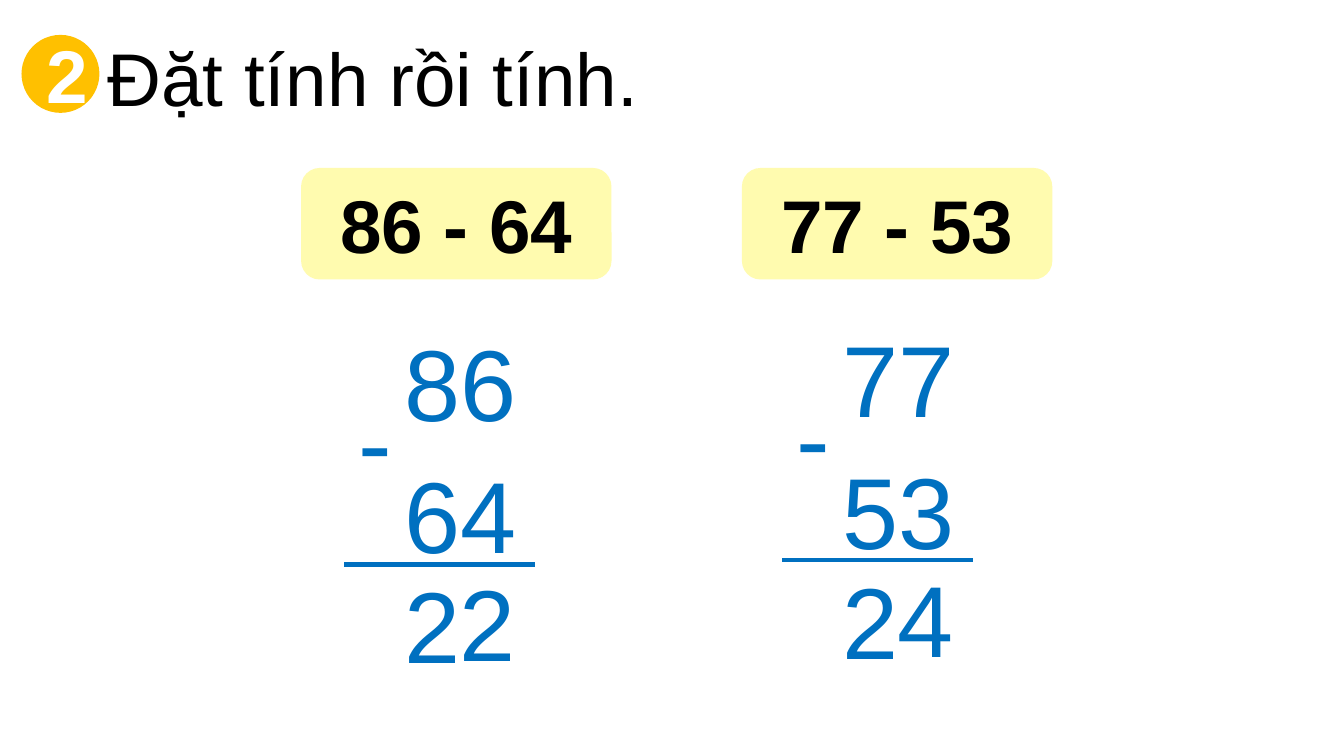
from dataclasses import dataclass

from lxml.etree import SubElement
from pptx import Presentation
from pptx.dml.color import RGBColor
from pptx.enum.shapes import MSO_CONNECTOR, MSO_SHAPE
from pptx.enum.text import MSO_ANCHOR, MSO_AUTO_SIZE, PP_ALIGN
from pptx.oxml.ns import qn
from pptx.slide import Slide
from pptx.text.text import TextFrame
from pptx.util import Inches, Pt

BLACK = RGBColor(0x00, 0x00, 0x00)
WHITE = RGBColor(0xFF, 0xFF, 0xFF)
BLUE = RGBColor(0x00, 0x70, 0xC0)
AMBER = RGBColor(0xFF, 0xC0, 0x00)
CREAM = RGBColor(0xFF, 0xFB, 0xAF)


@dataclass(frozen=True)
class Subtraction:
    top_number: str
    bottom_number: str
    result: str
    card_left: float
    left: float  # left end of the rule
    rule_y: float


SUBTRACTIONS = [
    Subtraction("86", "64", "22", 2.24, 2.56, 4.2),
    Subtraction("77", "53", "24", 5.52, 5.82, 4.17),
]


def write(tf: TextFrame, text: str, size: int, color: RGBColor,
          bold: bool = False, align: PP_ALIGN = PP_ALIGN.CENTER) -> None:
    tf.word_wrap = True
    p = tf.paragraphs[0]
    p.text = text
    p.alignment = align
    p.font.name = "Arial"
    p.font.size = Pt(size)
    p.font.bold = bold
    p.font.color.rgb = color


def add_label(s: Slide, text: str, left: float, top: float, width: float) -> None:
    box = s.shapes.add_textbox(Inches(left), Inches(top), Inches(width), Inches(1.01))
    write(box.text_frame, text, 54, BLUE)


def add_filled(s: Slide, kind: MSO_SHAPE, left: float, top: float, width: float,
               height: float, fill: RGBColor, text: str, color: RGBColor) -> None:
    sp = s.shapes.add_shape(kind, Inches(left), Inches(top), Inches(width), Inches(height))
    sp.shadow.inherit = False
    sp.fill.solid()
    sp.fill.fore_color.rgb = fill
    sp.line.fill.background()
    sp.text_frame.vertical_anchor = MSO_ANCHOR.MIDDLE
    write(sp.text_frame, text, 40, color, bold=True)


def add_rule(s: Slide, left: float, y: float, width: float) -> None:
    line = s.shapes.add_connector(MSO_CONNECTOR.STRAIGHT, Inches(left), Inches(y),
                                  Inches(left + width), Inches(y))
    line.line.color.rgb = BLUE
    line.line.width = Pt(2.25)
    SubElement(line._element.spPr, qn("a:effectLst"))


def add_subtraction(s: Slide, sub: Subtraction) -> None:
    # Card with the exercise
    add_filled(s, MSO_SHAPE.ROUNDED_RECTANGLE, sub.card_left, 1.25, 2.31, 0.83, CREAM,
               f"{sub.top_number} - {sub.bottom_number}", BLACK)
    # Column working, placed from the rule
    x, y = sub.left, sub.rule_y
    add_label(s, sub.top_number, x + 0.28, y - 1.86, 1.17)
    add_label(s, sub.bottom_number, x + 0.28, y - 0.88, 1.17)
    add_label(s, "-", x - 0.35, y - 1.43, 1.17)
    add_rule(s, x, y, 1.42)
    # Result, digit by digit
    tens, ones = sub.result
    add_label(s, tens, x + 0.34, y - 0.06, 0.64)
    add_label(s, ones, x + 0.75, y - 0.08, 0.64)


def main() -> None:
    prs = Presentation()
    prs.slide_width = Inches(10)
    prs.slide_height = Inches(10 * 9 / 16)
    s = prs.slides.add_slide(prs.slide_layouts[5])

    # Title
    title = s.shapes.title
    title.left, title.top = Inches(0.7), Inches(0.1)
    title.width, title.height = Inches(6.88), Inches(0.94)
    title.text_frame.auto_size = MSO_AUTO_SIZE.NONE
    title.text_frame.vertical_anchor = MSO_ANCHOR.MIDDLE
    write(title.text_frame, "Đặt tính rồi tính.", 40, BLACK, align=PP_ALIGN.JUSTIFY)

    # Exercise number
    add_filled(s, MSO_SHAPE.OVAL, 0.16, 0.26, 0.58, 0.58, AMBER, "2", WHITE)

    for sub in SUBTRACTIONS:
        add_subtraction(s, sub)

    prs.save("out.pptx")


if __name__ == "__main__":
    main()
